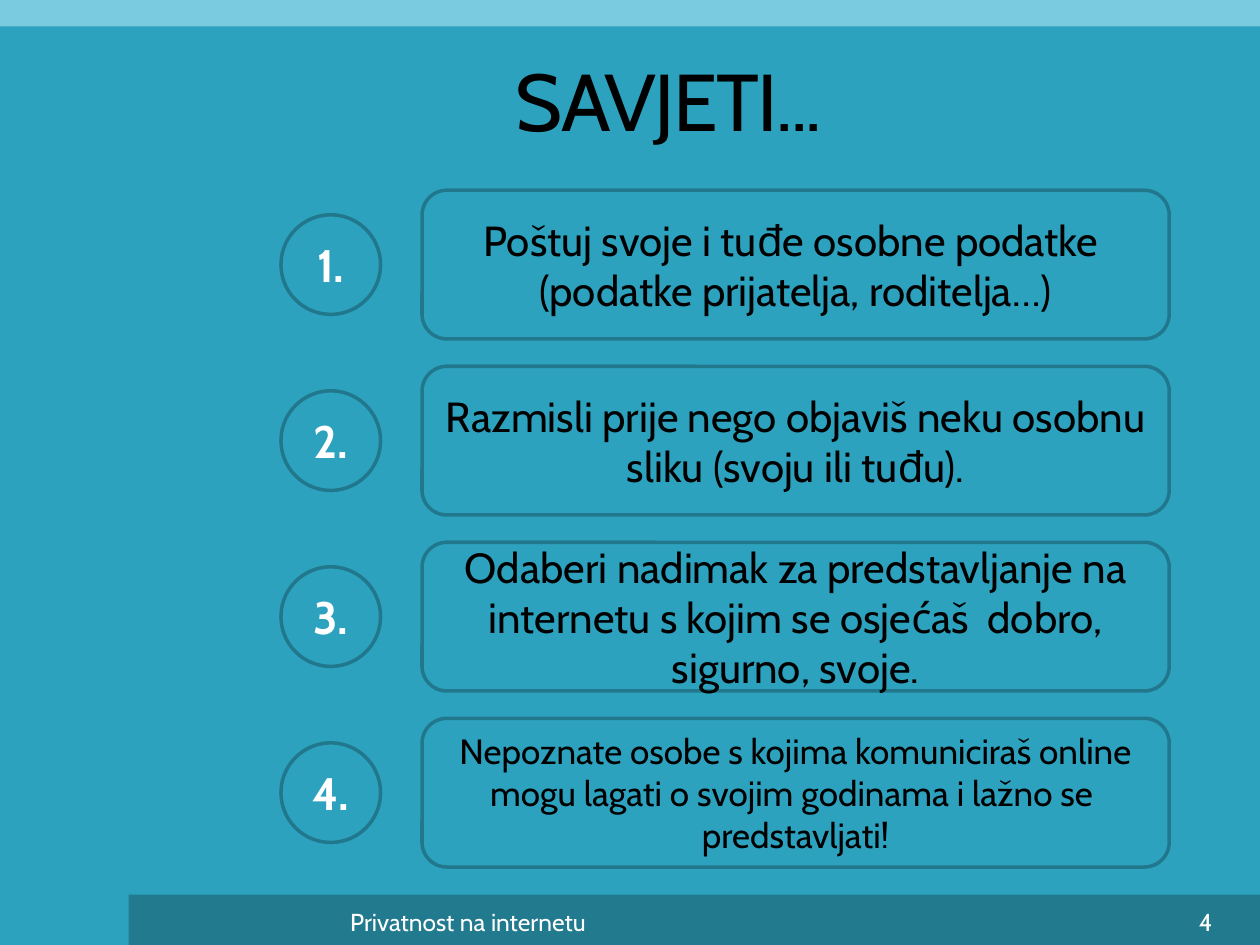
import pptx
import pptx.util
import pptx.dml.color
import pptx.enum.shapes
import pptx.enum.text

WIDTH, HEIGHT = 10, 7.5
TEAL, DARK, PALE, EDGE = "2DA2BF", "227A8F", "7ACBE0", "21788D"
BLACK, WHITE = "000000", "FFFFFF"
SHAPES = pptx.enum.shapes.MSO_SHAPE
ALIGN = pptx.enum.text.PP_ALIGN

TITLE = "SAVJETI... "
FOOTER = "Privatnost na internetu"
PAGE_NUMBER = "4"
TIPS = [  # lines of the tip, text size
    (["Poštuj svoje i tuđe osobne podatke ", "(podatke prijatelja, roditelja…)"], 24),
    (["Razmisli prije nego objaviš neku osobnu sliku (svoju ili tuđu)."], 24),
    (["Odaberi nadimak za predstavljanje na internetu s kojim se osjećaš  dobro, "
      "sigurno, svoje."], 24),
    (["Nepoznate osobe s kojima komuniciraš online mogu lagati o svojim godinama "
      "i lažno se  predstavljati!"], 20),
]

FIRST_ROW, ROW_PITCH = 1.51, 1.397
CARD_LEFT, CARD_WIDTH, CARD_HEIGHT = 3.35, 5.93, 1.18
BADGE_LEFT, BADGE_SIZE = 2.23, 0.79
FOOTER_LEFT, FOOTER_TOP, FOOTER_HEIGHT = 1.02, 7.1, 0.43


def color(value):
    return pptx.dml.color.RGBColor.from_string(value)


def inches(*lengths):
    return [pptx.util.Inches(length) for length in lengths]


def add_shape(page, kind, place, fill=None, line=None):
    shape = page.shapes.add_shape(kind, *inches(*place))
    shape.shadow.inherit = False
    if fill:
        shape.fill.solid()
        shape.fill.fore_color.rgb = color(fill)
    else:
        shape.fill.background()
    if line:
        shape.line.color.rgb = color(line)
        shape.line.width = pptx.util.Pt(2)
    else:
        shape.line.fill.background()
    return shape


def write(box, lines, size, ink, bold=False, align=ALIGN.CENTER, margin=None):
    """Fill a box with one paragraph per line and return the spans."""
    frame = box.text_frame
    frame.word_wrap = True
    frame.vertical_anchor = pptx.enum.text.MSO_ANCHOR.MIDDLE
    if margin is not None:
        for side in ("left", "top", "right", "bottom"):
            setattr(frame, f"margin_{side}", pptx.util.Inches(margin))
    spans = []
    for index, line in enumerate(lines):
        para = frame.add_paragraph() if index else frame.paragraphs[0]
        para.alignment = align
        span = para.add_run()
        span.text = line
        formats = {"name": "Cabin", "size": pptx.util.Pt(size), "bold": bold}
        for name, value in formats.items():
            setattr(span.font, name, value)
        span.font.color.rgb = color(ink)
        spans.append(span)
    return spans


def add_text(page, place, *content, **options):
    return write(page.shapes.add_textbox(*inches(*place)), *content, **options)


def add_frame(page):
    """Draw the bands, the title and the footer."""
    add_shape(page, SHAPES.RECTANGLE,
              (FOOTER_LEFT, FOOTER_TOP, WIDTH - FOOTER_LEFT, FOOTER_HEIGHT), DARK)
    add_shape(page, SHAPES.RECTANGLE, (0, 0, WIDTH, 0.21), PALE)
    for span in add_text(page, (0.99, 0.36, 8.77, 0.86), [TITLE], 46, BLACK):
        span.font._element.set("spc", "-100")
    number = add_shape(page, SHAPES.DOUBLE_BRACKET, (9.38, 7.13, 0.38, 0.37))
    write(number, [PAGE_NUMBER], 14, WHITE, margin=0)
    add_text(page, (FOOTER_LEFT, FOOTER_TOP, 5.39, FOOTER_HEIGHT), [FOOTER], 14, WHITE)


def add_tips(page):
    for index, (lines, size) in enumerate(TIPS):
        top = FIRST_ROW + index * ROW_PITCH
        card = add_shape(page, SHAPES.ROUNDED_RECTANGLE,
                         (CARD_LEFT, top, CARD_WIDTH, CARD_HEIGHT), line=EDGE)
        write(card, lines, size, BLACK)
        badge_top = top + (CARD_HEIGHT - BADGE_SIZE) / 2
        badge = add_shape(page, SHAPES.OVAL,
                          (BADGE_LEFT, badge_top, BADGE_SIZE, BADGE_SIZE), TEAL, EDGE)
        write(badge, [f"{index + 1}."], 26, WHITE, bold=True)


def main():
    deck = pptx.Presentation()
    deck.slide_width, deck.slide_height = inches(WIDTH, HEIGHT)
    page = deck.slides.add_slide(deck.slide_layouts[6])
    page.background.fill.solid()
    page.background.fill.fore_color.rgb = color(TEAL)
    add_frame(page)
    add_tips(page)
    deck.save("out.pptx")


if __name__ == "__main__":
    main()
